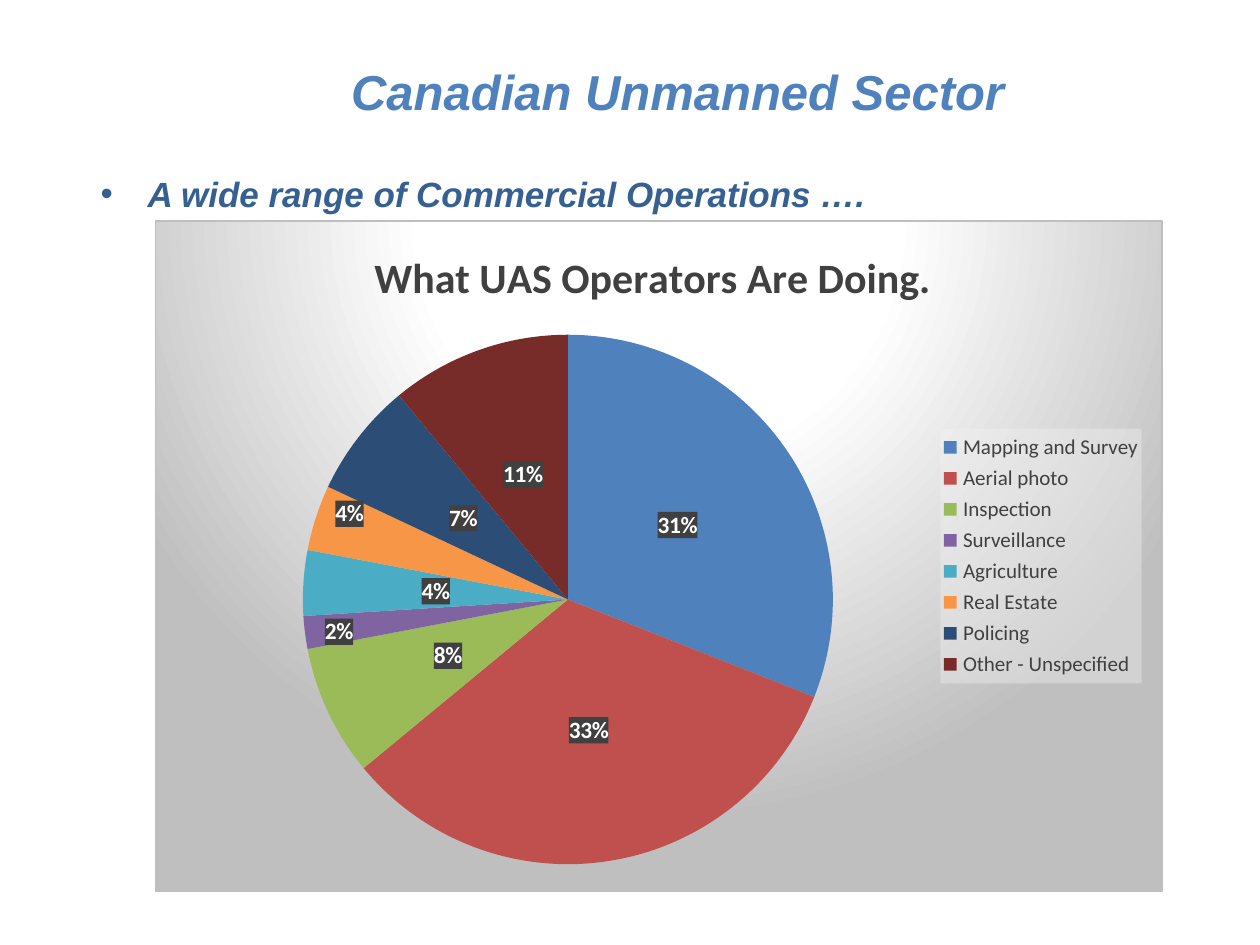
"""Build a slide with a pie chart of commercial UAS operations."""
from dataclasses import dataclass

from lxml import etree
from pptx import Presentation
from pptx.chart.data import CategoryChartData
from pptx.dml.color import RGBColor
from pptx.enum import chart as ch, text
from pptx.oxml import parse_xml
from pptx.oxml.ns import nsdecls, qn
from pptx.util import Inches, Pt


@dataclass(frozen=True)
class Theme:
    """Fonts, type sizes and colours of the slide."""
    head_font: str = "Arial"
    chart_font: str = "Calibri"
    title_size: float = 21
    bullet_size: float = 15
    chart_title_size: float = 18
    label_size: float = 10
    legend_size: float = 9
    title: str = "4F81BD"
    bullet: str = "376092"
    ink: str = "404040"
    black: str = "000000"
    white: str = "FFFFFF"
    edge: str = "BFBFBF"
    legend_fill: str = "F2F2F2"


THEME = Theme()
OPERATIONS = [
    ("Mapping and Survey", 31, "4F81BD"),
    ("Aerial photo", 33, "C0504D"),
    ("Inspection", 8, "9BBB59"),
    ("Surveillance", 2, "8064A2"),
    ("Agriculture", 4, "4BACC6"),
    ("Real Estate", 4, "F79646"),
    ("Policing", 7, "2C4D75"),
    ("Other - Unspecified", 11, "772C2A"),
]
RIM_LABEL_SHIFTS = {"Surveillance": (0.01, 0.02), "Real Estate": (0.01, -0.03)}


def style(font, name, size, color, bold=False, italic=False):
    """Set the look of a font."""
    font.name, font.size = name, Pt(size)
    font.bold, font.italic = bold, italic
    font.color.rgb = RGBColor.from_string(color)


def add_run(p, words, *look):
    """Add one styled run to a paragraph."""
    r = p.add_run()
    r.text = words
    style(r.font, *look)


def add_title(s, words):
    """Place and fill the title placeholder."""
    sp = s.shapes.title
    sp.left, sp.top, sp.width, sp.height = map(Inches, (0.66, 0.23, 6.75, 0.94))
    tf = sp.text_frame
    tf.auto_size = text.MSO_AUTO_SIZE.NONE
    tf.vertical_anchor = text.MSO_ANCHOR.MIDDLE
    tf.margin_bottom = Inches(0.37)
    p = tf.paragraphs[0]
    p.alignment = text.PP_ALIGN.CENTER
    add_run(p, words, THEME.head_font, THEME.title_size, THEME.title, True, True)


def add_bullet(s, words):
    """Add the bulleted lead-in line."""
    sp = s.shapes.add_textbox(*map(Inches, (0.5, 0.98, 6.91, 1.67)))
    tf = sp.text_frame
    tf.word_wrap = True
    p = tf.paragraphs[0]
    pPr = p._p.get_or_add_pPr()
    pPr.set("marL", str(Inches(0.28)))
    pPr.set("indent", str(-Inches(0.28)))
    etree.SubElement(pPr, qn("a:buFont"), typeface=THEME.head_font)
    etree.SubElement(pPr, qn("a:buChar"), char="•")
    p.space_after = Pt(9)
    add_run(p, words, THEME.head_font, THEME.bullet_size, THEME.bullet, True, True)


def set_layout(parent, index, **settings):
    """Give a chart part a manual layout, in fractions of the chart."""
    for old in parent.findall(qn("c:layout")):
        parent.remove(old)
    layout = parse_xml(f'<c:layout {nsdecls("c")}><c:manualLayout/></c:layout>')
    for name, value in settings.items():
        etree.SubElement(layout[0], qn(f"c:{name}"), val=str(value))
    parent.insert(index, layout)


def clear_fill(color, opacity):
    """Return chart shape properties with a see-through fill."""
    return parse_xml(
        f'<c:spPr {nsdecls("c", "a")}><a:solidFill><a:srgbClr val="{color}">'
        f'<a:alpha val="{opacity * 1000}"/></a:srgbClr></a:solidFill></c:spPr>')


def backdrop():
    """Return the radial gradient and border of the chart area."""
    stops = ((0, THEME.white), (39, THEME.white), (100, THEME.edge))
    gs = "".join(f'<a:gs pos="{pos * 1000}"><a:srgbClr val="{color}"/></a:gs>'
                 for pos, color in stops)
    return parse_xml(
        f'<c:spPr {nsdecls("c", "a")}><a:gradFill><a:gsLst>{gs}</a:gsLst>'
        '<a:path path="circle"><a:fillToRect l="50000" t="-80000" r="50000" b="180000"/>'
        f'</a:path></a:gradFill><a:ln w="{Pt(0.75)}"><a:solidFill>'
        f'<a:srgbClr val="{THEME.edge}"/></a:solidFill></a:ln></c:spPr>')


def label_slices(chart, series):
    """Show percentages, with the thin slices labelled near the rim."""
    labels = series.data_labels
    labels.show_percentage, labels.show_value = True, False
    labels.number_format, labels.number_format_is_linked = "0%", False
    labels.position = ch.XL_LABEL_POSITION.CENTER
    fonts = [labels.font]
    for i, (name, _, _) in enumerate(OPERATIONS):
        if name in RIM_LABEL_SHIFTS:
            label = series.points[i].data_label
            fonts.append(label.font)
            label.position = ch.XL_LABEL_POSITION.INSIDE_END
    for font in fonts:
        style(font, THEME.chart_font, THEME.label_size, THEME.white, True)
    root = chart.element
    for box in root.xpath(".//c:ser/c:dLbls | .//c:ser/c:dLbls/c:dLbl"):
        box.find(qn("c:showVal")).set("val", "0")
        box.find(qn("c:showPercent")).set("val", "1")
        box.find(qn("c:txPr")).addprevious(clear_fill(THEME.ink, 75))
    for leader in root.xpath(".//c:showLeaderLines"):
        leader.set("val", "0")
    for box, (x, y) in zip(root.xpath(".//c:dLbl"), RIM_LABEL_SHIFTS.values()):
        set_layout(box, 1, x=x, y=y)


def add_pie(s, words):
    """Add the pie chart with its title, legend and labels."""
    data = CategoryChartData()
    data.categories = [name for name, _, _ in OPERATIONS]
    data.add_series("Series 1", [share for _, share, _ in OPERATIONS])
    chart = s.shapes.add_chart(ch.XL_CHART_TYPE.PIE,
                               *map(Inches, (0.92, 1.31, 6, 4)), data).chart
    style(chart.font, THEME.chart_font, THEME.label_size, THEME.black)
    root = chart.element
    root.find(qn("c:chart")).addnext(backdrop())
    edges = {"xMode": "edge", "yMode": "edge"}

    chart.has_title = True
    add_run(chart.chart_title.text_frame.paragraphs[0], words,
            THEME.chart_font, THEME.chart_title_size, THEME.ink, True)
    set_layout(root.xpath("c:chart/c:title")[0], 1, **edges, x=0.21, y=0.03)

    chart.has_legend = True
    chart.legend.position = ch.XL_LEGEND_POSITION.RIGHT
    chart.legend.include_in_layout = False
    style(chart.legend.font, THEME.chart_font, THEME.legend_size, THEME.ink)
    legend = root.xpath("c:chart/c:legend")[0]
    set_layout(legend, 1, **edges, x=0.78, y=0.31, w=0.2, h=0.38)
    legend.find(qn("c:txPr")).addprevious(clear_fill(THEME.legend_fill, 39))

    plot = chart.plots[0]
    plot.vary_by_categories = True
    series = plot.series[0]
    for i, (_, _, color) in enumerate(OPERATIONS):
        fill = series.points[i].format.fill
        fill.solid()
        fill.fore_color.rgb = RGBColor.from_string(color)
    set_layout(root.xpath("c:chart/c:plotArea")[0], 0, layoutTarget="inner",
               **edges, x=0.14, y=0.17, w=0.54, h=0.79)
    label_slices(chart, series)


def main():
    """Build and save the slide."""
    prs = Presentation()
    prs.slide_width = Inches(7.5)
    prs.slide_height = prs.slide_width * 3 // 4
    s = prs.slides.add_slide(prs.slide_layouts[5])
    add_title(s, "Canadian Unmanned Sector")
    add_bullet(s, "A wide range of Commercial Operations ….")
    add_pie(s, "What UAS Operators Are Doing.")
    prs.save("out.pptx")


if __name__ == "__main__":
    main()
